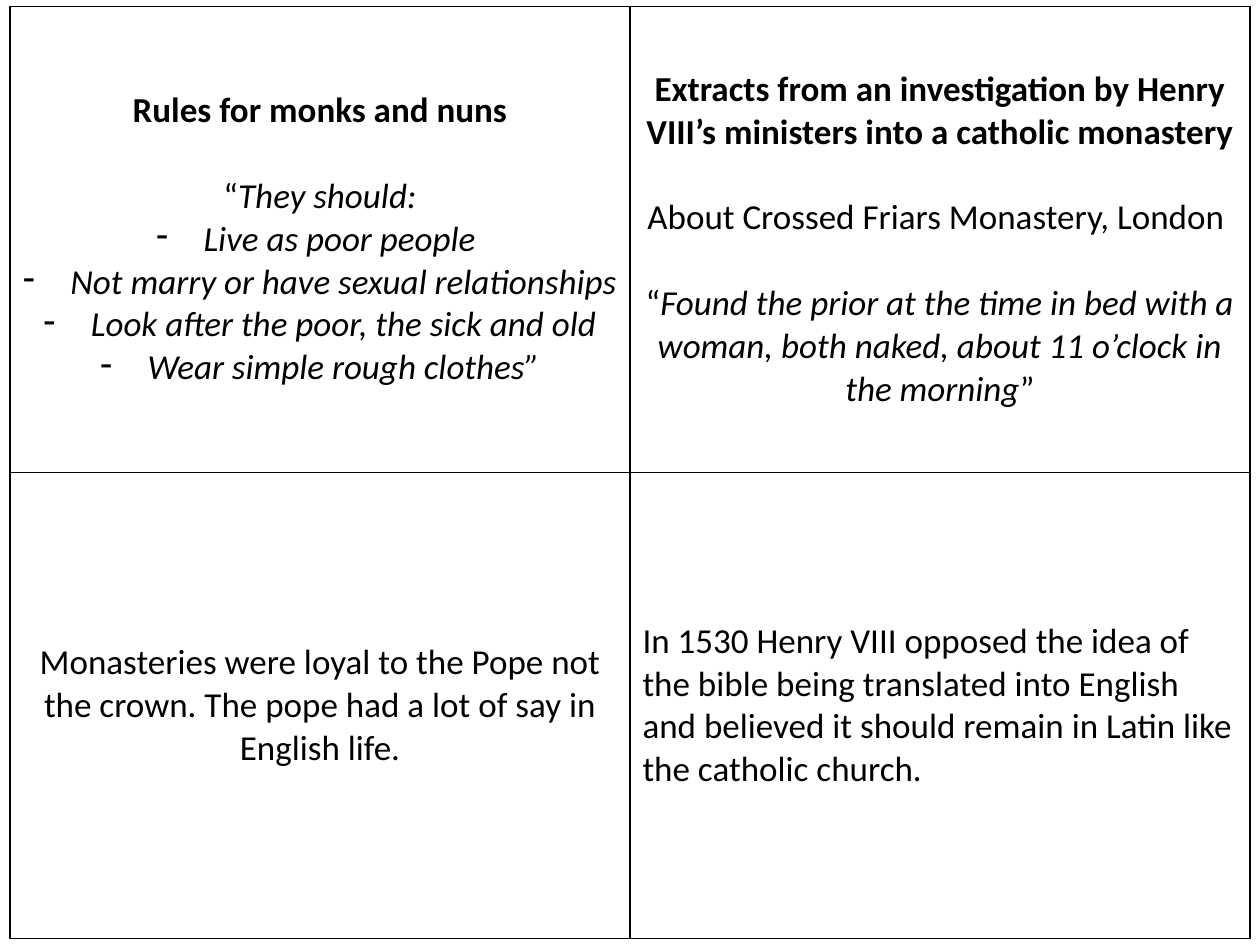
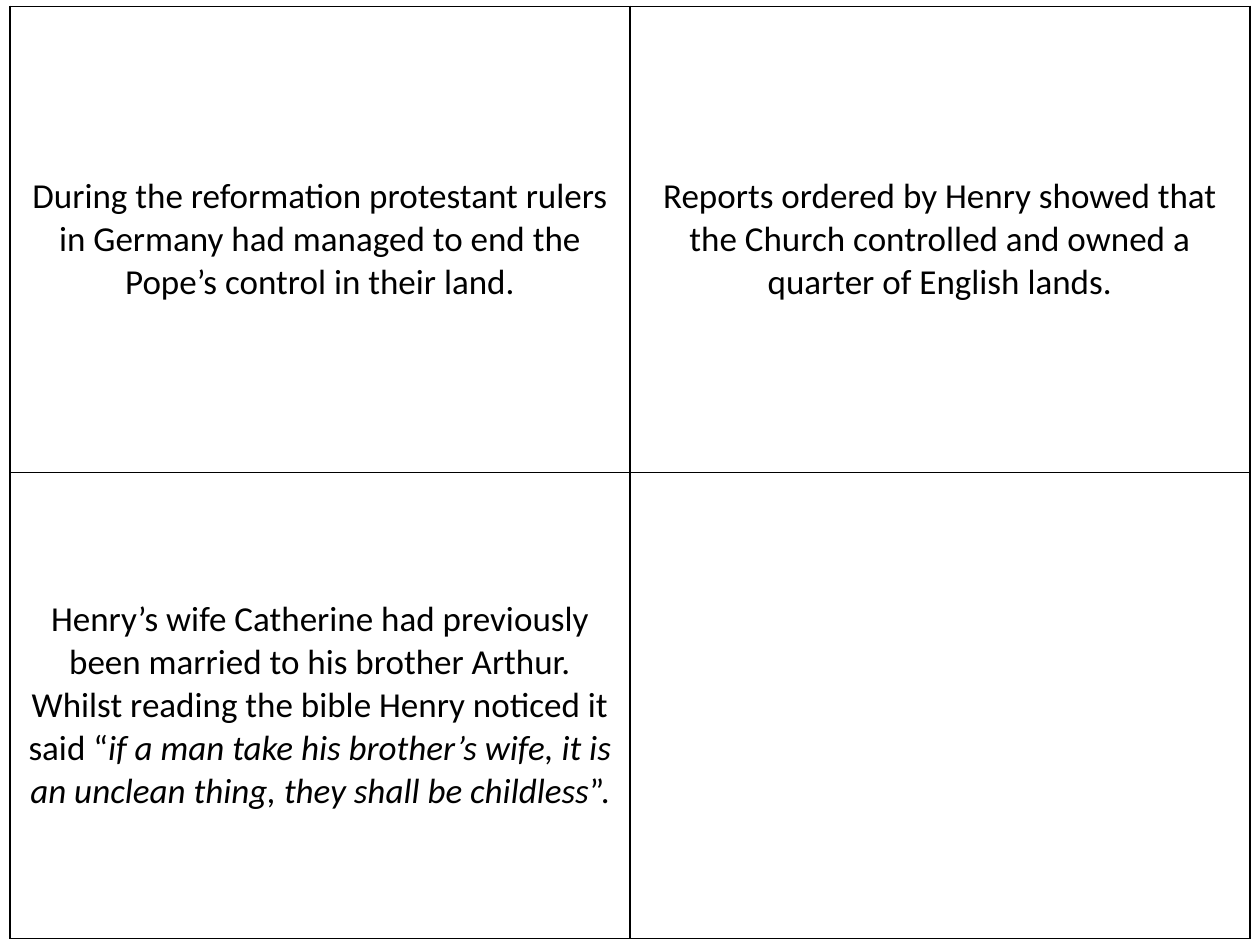
"""Build two slides of source cards on Henry VIII and the monasteries."""
from lxml import etree
from pptx import Presentation
from pptx.dml.color import RGBColor
from pptx.enum import text
from pptx.oxml import ns
from pptx.util import Pt

BLACK = RGBColor(0, 0, 0)
FONT, SIZE, BLANK_LINE = "Calibri", 20, 24.4
LEFT, TOP, CARD_WIDTH, CARD_HEIGHT = 5.76, 3.6, 354.24, 266.4
BORDER, BULLET_INDENT = 1, 27
PLAIN, BOLD, ITALIC = "plain", "bold", "italic"


def line(*spans, gap=False, bullet=False, centred=True):
    """Describe one paragraph of a card."""
    return {"spans": spans, "gap": gap, "bullet": bullet, "centred": centred}


RULES = ["Live as poor people ", "Not marry or have sexual relationships ",
         "Look after the poor, the sick and old", "Wear simple rough clothes”"]
SLIDES = [
    [[[line(("Rules for monks and nuns", BOLD)),
       line(("“", PLAIN), ("They should:", ITALIC), gap=True),
       *(line((rule, ITALIC), bullet=True) for rule in RULES)],
      [line(("Extracts from an investigation by Henry VIII’s ministers into a "
             "catholic monastery", BOLD)),
       line(("About Crossed Friars Monastery, London ", PLAIN), gap=True),
       line(("“", PLAIN),
            ("Found the prior at the time in bed with a woman, both naked, "
             "about 11 o’clock in the morning", ITALIC),
            ("”", PLAIN), gap=True)]],
     [[line(("Monasteries were loyal to the Pope not the crown. The pope had "
             "a lot of say in English life.", PLAIN))],
      [line(("In 1530 Henry VIII opposed the idea of the bible being translated "
             "into English and believed it should remain in Latin like the "
             "catholic church.", PLAIN), centred=False)]]],
    [[[line(("During the reformation protestant rulers in Germany had managed "
             "to end the Pope’s control in their land.", PLAIN))],
      [line(("Reports ordered by Henry showed that the Church controlled and "
             "owned a quarter of English lands.", PLAIN))]],
     [[line(("Henry’s wife Catherine had previously been married to his brother "
             "Arthur. Whilst reading the bible Henry noticed it said “", PLAIN),
            ("if a man take his brother’s wife, it is an unclean thing, they "
             "shall be childless", ITALIC),
            ("”.", PLAIN))],
      []]],
]


def add_borders(cell):
    """Draw a solid line on all four sides of a cell."""
    properties = cell._tc.get_or_add_tcPr()
    for side in ("lnL", "lnR", "lnT", "lnB"):
        edge = etree.SubElement(properties, ns.qn(f"a:{side}"), w=str(Pt(BORDER)))
        fill = etree.SubElement(edge, ns.qn("a:solidFill"))
        etree.SubElement(fill, ns.qn("a:srgbClr"), val=str(BLACK))


def add_bullet(paragraph):
    """Give a paragraph a hanging dash."""
    properties = paragraph._p.get_or_add_pPr()
    properties.set("marL", str(Pt(BULLET_INDENT)))
    properties.set("indent", str(-Pt(BULLET_INDENT)))
    etree.SubElement(properties, ns.qn("a:buFontTx"))
    etree.SubElement(properties, ns.qn("a:buChar"), char="-")


def write_line(paragraph, content):
    """Fill a paragraph with its spans and style."""
    paragraph.alignment = (text.PP_ALIGN.CENTER if content["centred"]
                           else text.PP_ALIGN.LEFT)
    if content["gap"]:
        paragraph.space_before = Pt(BLANK_LINE)
    if content["bullet"]:
        add_bullet(paragraph)
    font = paragraph.font
    font.name, font.size = FONT, Pt(SIZE)
    font.color.rgb = BLACK
    for words, style in content["spans"]:
        span = paragraph.add_run()
        span.text = words
        span.font.bold = style == BOLD
        span.font.italic = style == ITALIC


def write_card(cell, lines):
    """Style one cell and write its paragraphs."""
    add_borders(cell)
    cell.fill.background()
    cell.vertical_anchor = text.MSO_ANCHOR.MIDDLE
    for index, content in enumerate(lines):
        frame = cell.text_frame
        paragraph = frame.add_paragraph() if index else frame.paragraphs[0]
        write_line(paragraph, content)


def add_cards(page, cards):
    """Lay out a grid of cards as a table."""
    rows, columns = len(cards), len(cards[0])
    table = page.shapes.add_table(
        rows, columns, Pt(LEFT), Pt(TOP),
        Pt(columns * CARD_WIDTH), Pt(rows * CARD_HEIGHT)).table
    table.first_row = table.horz_banding = False
    for row, row_cards in enumerate(cards):
        for column, lines in enumerate(row_cards):
            write_card(table.cell(row, column), lines)


def main():
    """Build and save the deck."""
    deck = Presentation()
    deck.slide_width, deck.slide_height = Pt(720), Pt(540)
    for cards in SLIDES:
        add_cards(deck.slides.add_slide(deck.slide_layouts[6]), cards)
    deck.save("out.pptx")


if __name__ == "__main__":
    main()
